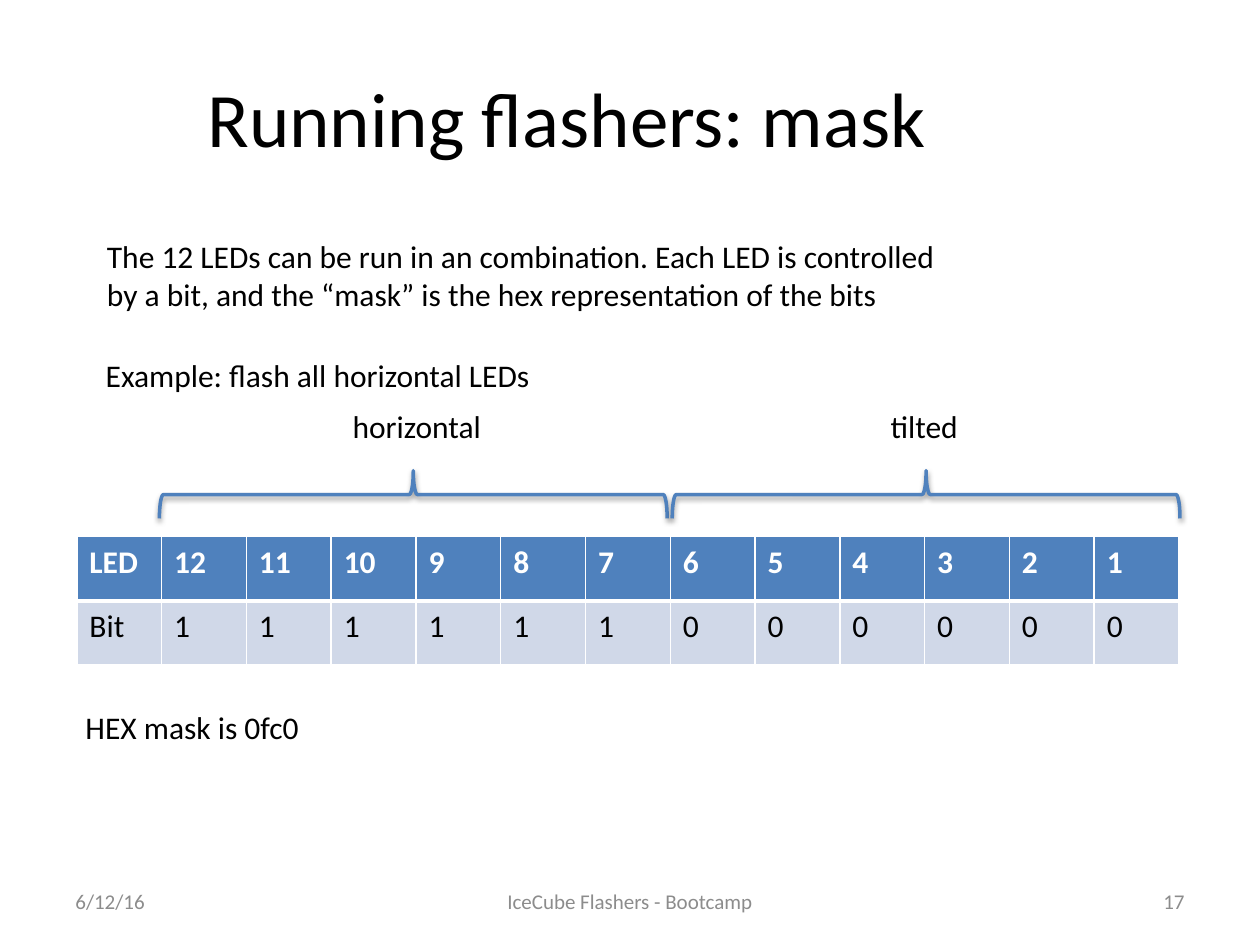
from dataclasses import dataclass

from lxml import etree
from pptx import Presentation
from pptx.dml.color import RGBColor
from pptx.enum.shapes import MSO_SHAPE
from pptx.enum.text import MSO_ANCHOR, PP_ALIGN
from pptx.oxml.ns import qn
from pptx.util import Pt

LEFT, CENTER, RIGHT = PP_ALIGN.LEFT, PP_ALIGN.CENTER, PP_ALIGN.RIGHT
TOP, MIDDLE = MSO_ANCHOR.TOP, MSO_ANCHOR.MIDDLE
LEFT_BRACE = MSO_SHAPE.LEFT_BRACE

FONT = "Calibri"
COLORS = {
    "text": "000000",
    "footer": "8C8C8C",
    "accent": "4F81BD",
    "band": "D0D8E8",
    "white": "FFFFFF",
    "shadow": "000000",
}
LED_COUNT = 12
MASK = 0x0FC0
COL_WIDTH, ROW_HEIGHT = 48.46, 36.72
TABLE_LEFT, TABLE_TOP = 43.92, 306.72
BRACE_TOP, BRACE_WIDTH, BRACE_HEIGHT = 137.52, 27.36, 290.16


@dataclass(frozen=True)
class Label:
    text: str
    left: float
    top: float
    width: float
    height: float = 28.8
    size: float = 18
    color: str = "text"
    align: PP_ALIGN = LEFT
    anchor: MSO_ANCHOR = TOP


@dataclass(frozen=True)
class TableRow:
    values: list[str]
    fill: str
    color: str
    bold: bool
    top_line: float
    bottom_line: float


def rgb(name: str) -> RGBColor:
    return RGBColor.from_string(COLORS[name])


def write(tf, text: str, *, size: float = 18, color: str = "text",
          bold: bool = False, align: PP_ALIGN = LEFT) -> None:
    p = tf.paragraphs[0]
    p.alignment = align
    r = p.add_run()
    r.text = text
    r.font.name = FONT
    r.font.size = Pt(size)
    r.font.bold = bold
    r.font.color.rgb = rgb(color)


def add_label(s, label: Label) -> None:
    sp = s.shapes.add_textbox(Pt(label.left), Pt(label.top), Pt(label.width), Pt(label.height))
    tf = sp.text_frame
    tf.word_wrap = True
    tf.vertical_anchor = label.anchor
    write(tf, label.text, size=label.size, color=label.color, align=label.align)


def add_color(parent, name: str):
    fill = etree.SubElement(parent, qn("a:solidFill"))
    return etree.SubElement(fill, qn("a:srgbClr"), val=COLORS[name])


def add_brace(s, left: float) -> None:
    sp = s.shapes.add_shape(LEFT_BRACE, Pt(left), Pt(BRACE_TOP), Pt(BRACE_WIDTH), Pt(BRACE_HEIGHT))
    sp.rotation = 90
    sp.fill.background()
    sp.line.color.rgb = rgb("accent")
    sp.line.width = Pt(2)
    sp.shadow.inherit = False
    effects = sp.element.spPr.find(qn("a:effectLst"))
    shadow = etree.SubElement(effects, qn("a:outerShdw"), blurRad=str(Pt(3.1)),
                              dist=str(Pt(1.6)), dir="5400000", rotWithShape="0")
    color = etree.SubElement(shadow, qn("a:srgbClr"), val=COLORS["shadow"])
    etree.SubElement(color, qn("a:alpha"), val="38000")


def set_borders(cell, top: float, bottom: float) -> None:
    tc_pr = cell._tc.get_or_add_tcPr()
    for side, width in (("L", 1), ("R", 1), ("T", top), ("B", bottom)):
        add_color(etree.SubElement(tc_pr, qn(f"a:ln{side}"), w=str(Pt(width))), "white")


def add_bit_table(s, rows: list[TableRow]) -> None:
    cols = LED_COUNT + 1
    table = s.shapes.add_table(len(rows), cols, Pt(TABLE_LEFT), Pt(TABLE_TOP),
                               Pt(COL_WIDTH * cols), Pt(ROW_HEIGHT * len(rows))).table
    for col in table.columns:
        col.width = Pt(COL_WIDTH)
    for row, data in zip(table.rows, rows):
        row.height = Pt(ROW_HEIGHT)
        for cell, value in zip(row.cells, data.values):
            set_borders(cell, data.top_line, data.bottom_line)
            cell.fill.solid()
            cell.fill.fore_color.rgb = rgb(data.fill)
            write(cell.text_frame, value, color=data.color, bold=data.bold)


def main() -> None:
    """Build the flasher mask slide."""
    prs = Presentation()
    prs.slide_width, prs.slide_height = Pt(720), Pt(540)
    s = prs.slides.add_slide(prs.slide_layouts[6])

    footer = {"top": 500.5, "size": 12, "color": "footer", "anchor": MIDDLE}
    labels = [
        Label("6/12/16", 36, width=168, **footer),
        Label("IceCube Flashers - Bootcamp", 246, width=228, align=CENTER, **footer),
        Label("17", 516, width=168, align=RIGHT, **footer),
        Label("Running flashers: mask", 0, 21.6, 648, 90, size=44, align=CENTER, anchor=MIDDLE),
        Label("The 12 LEDs can be run in an combination. Each LED is controlled by a bit, "
              "and the “mask” is the hex representation of the bits", 54, 131.76, 488.88, 51.12),
        Label("Example: flash all horizontal LEDs", 53.28, 200.16, 488.88),
        Label("horizontal", 194.4, 228.96, 102.96),
        Label("tilted", 476.64, 228.96, 102.96, align=CENTER),
        Label("HEX mask is 0fc0", 41.76, 401.04, 488.88),
    ]
    for label in labels:
        add_label(s, label)

    leds = range(LED_COUNT, 0, -1)
    add_bit_table(s, [
        TableRow(["LED", *map(str, leds)], "accent", "white", True, 1, 3),
        TableRow(["Bit", *(str(MASK >> (led - 1) & 1) for led in leds)],
                 "band", "text", False, 3, 1),
    ])
    for left in (222.48, 515.52):
        add_brace(s, left)

    prs.save("out.pptx")


if __name__ == "__main__":
    main()
